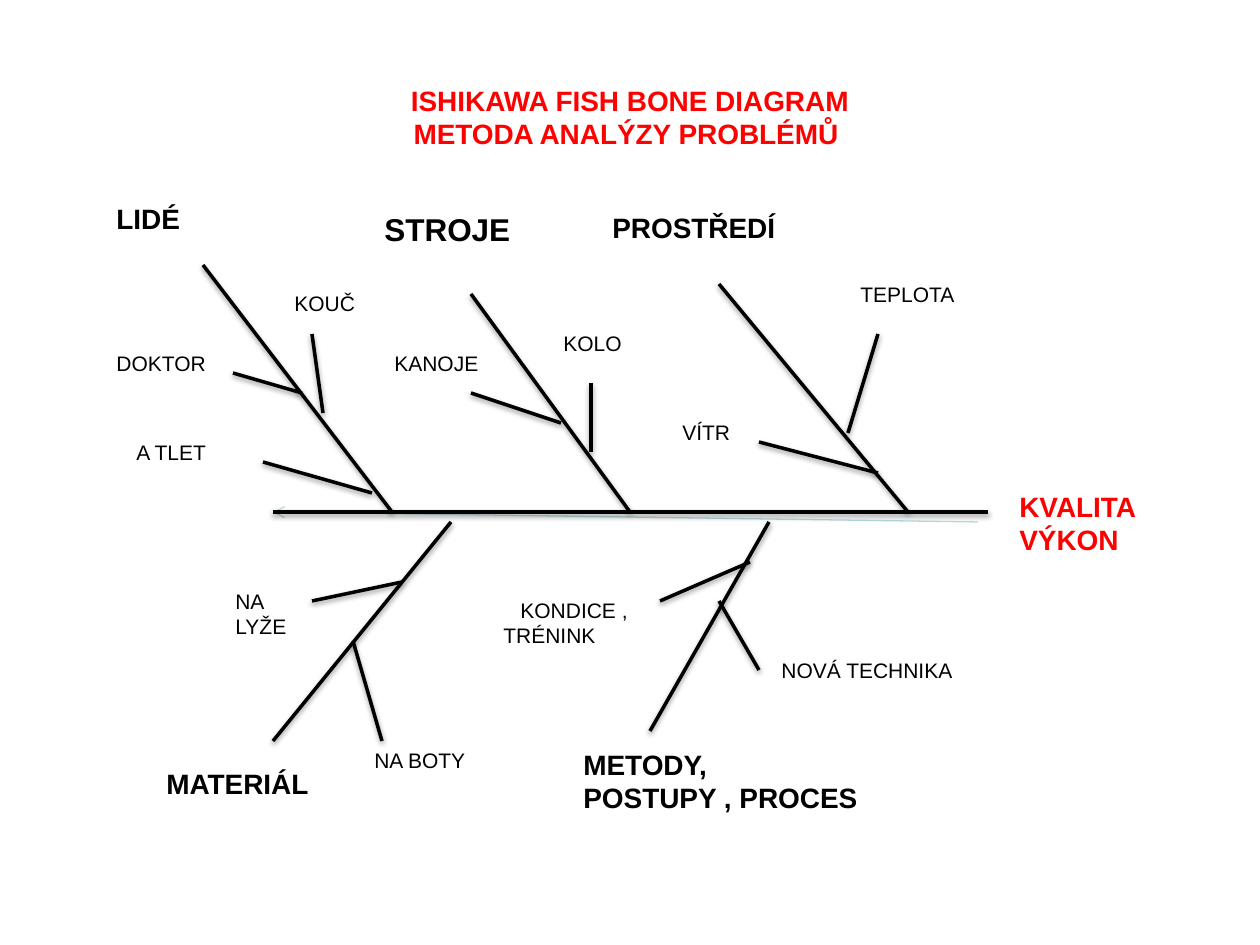
from copy import deepcopy
from lxml.etree import SubElement
from pptx import Presentation
from pptx.dml.color import RGBColor
from pptx.enum.shapes import MSO_CONNECTOR
from pptx.enum.text import MSO_ANCHOR, MSO_AUTO_SIZE, PP_ALIGN
from pptx.oxml.ns import qn
from pptx.util import Emu, Pt

BLACK = RGBColor(0x00, 0x00, 0x00)
RED = RGBColor(0xFF, 0x00, 0x00)
PALE_TEAL = RGBColor(0xB6, 0xDC, 0xDF)
PX = 914400 / 126


def format_text(para, size, bold, color):
    for span in para.runs:
        for name, value in {"name": "Arial", "size": Pt(size), "bold": bold}.items():
            setattr(span.font, name, value)
        span.font.color.rgb = color


def draw_line(ends, color, width):
    """Draw a straight line with an empty effect list and return it with that list."""
    line = page.shapes.add_connector(
        MSO_CONNECTOR.STRAIGHT, *(Emu(round(value * PX)) for value in ends))
    line.line.color.rgb = color
    line.line.width = Pt(width)
    return line, SubElement(line._element.spPr, qn("a:effectLst"))


deck = Presentation()
deck.slide_width = Emu(round(1260 * PX))
deck.slide_height = Emu(round(945 * PX))
page = deck.slides.add_slide(deck.slide_layouts[5])

# Title
title = page.shapes.title
for side, value in {"left": 63, "top": 38, "width": 1134, "height": 158}.items():
    setattr(title, side, Emu(round(value * PX)))
title.text_frame.text = "ISHIKAWA FISH BONE DIAGRAM\vMETODA ANALÝZY PROBLÉMŮ "
title.text_frame.vertical_anchor = MSO_ANCHOR.MIDDLE
heading = title.text_frame.paragraphs[0]
heading.alignment = PP_ALIGN.CENTER
format_text(heading, 16, True, RED)
for line_break in heading._p.findall(qn("a:br")):
    line_break.append(deepcopy(heading.runs[0]._r.rPr))

# Pale arrow behind the spine
arrow, _ = draw_line((978, 522, 273, 512), PALE_TEAL, 0.75)
SubElement(arrow.line._get_or_add_ln(), qn("a:tailEnd"), type="arrow")

# Spine, main bones and side bones: x1, y1, x2, y2
spine = [(273, 512, 988, 512)]
main_bones = [
    (719, 284, 908, 512),
    (471, 294, 630, 512),
    (203, 265, 392, 512),
    (273, 741, 451, 522),
    (650, 731, 769, 522),
]
side_bones = [
    (312, 334, 323, 413),
    (233, 373, 302, 393),
    (263, 462, 372, 493),
    (471, 393, 561, 423),
    (591, 383, 591, 452),
    (878, 334, 848, 433),
    (759, 442, 878, 473),
    (312, 601, 402, 582),
    (353, 641, 382, 741),
    (660, 601, 750, 562),
    (719, 601, 759, 670),
]
for ends in main_bones + side_bones + spine:
    bone, effects = draw_line(ends, BLACK, 2)
    shadow = SubElement(effects, qn("a:outerShdw"), blurRad=str(Pt(3.1)),
                        dist=str(Pt(1.6)), dir="5400000", rotWithShape="0")
    shade = SubElement(shadow, qn("a:srgbClr"), val="000000")
    SubElement(shade, qn("a:alpha"), val="38000")

# Labels: text, left, top, width, height, size, bold, colour
categories = [
    ("LIDÉ", 104, 195, 179, 47, 16, True, BLACK),
    ("STROJE", 372, 204, 179, 50, 18, True, BLACK),
    ("PROSTŘEDÍ", 600, 204, 248, 47, 16, True, BLACK),
    ("MATERIÁL", 154, 760, 179, 47, 16, True, BLACK),
    ("METODY,\nPOSTUPY , PROCES", 571, 741, 328, 81, 16, True, BLACK),
    ("KVALITA\nVÝKON", 1007, 483, 253, 106, 16, True, RED),
]
causes = [
    (*cause, 12, False, BLACK) for cause in [
        ("KOUČ", 282, 284, 120, 38),
        ("DOKTOR", 104, 344, 144, 38),
        ("A TLET", 124, 433, 129, 38),
        ("KANOJE", 382, 344, 111, 38),
        ("KOLO", 551, 324, 139, 38),
        ("TEPLOTA", 848, 275, 248, 38),
        ("VÍTR", 670, 413, 75, 38),
        ("NA LYŽE", 223, 582, 109, 63),
        ("NA BOTY", 362, 741, 139, 38),
        ("KONDICE , TRÉNINK", 491, 591, 169, 63),
        ("NOVÁ TECHNIKA", 769, 651, 258, 38),
    ]
]
unwrapped = {"KANOJE", "VÍTR"}
first_line_indents = {"KONDICE , TRÉNINK": 17}
for text, left, top, width, height, size, bold, color in categories + causes:
    box = page.shapes.add_textbox(
        *(Emu(round(value * PX)) for value in (left, top, width, height)))
    frame = box.text_frame
    frame.text = text
    frame.word_wrap = text not in unwrapped
    frame.auto_size = MSO_AUTO_SIZE.SHAPE_TO_FIT_TEXT
    for para in frame.paragraphs:
        format_text(para, size, bold, color)
        if text in first_line_indents:
            para._p.get_or_add_pPr().set("indent", str(round(first_line_indents[text] * PX)))

deck.save("out.pptx")
